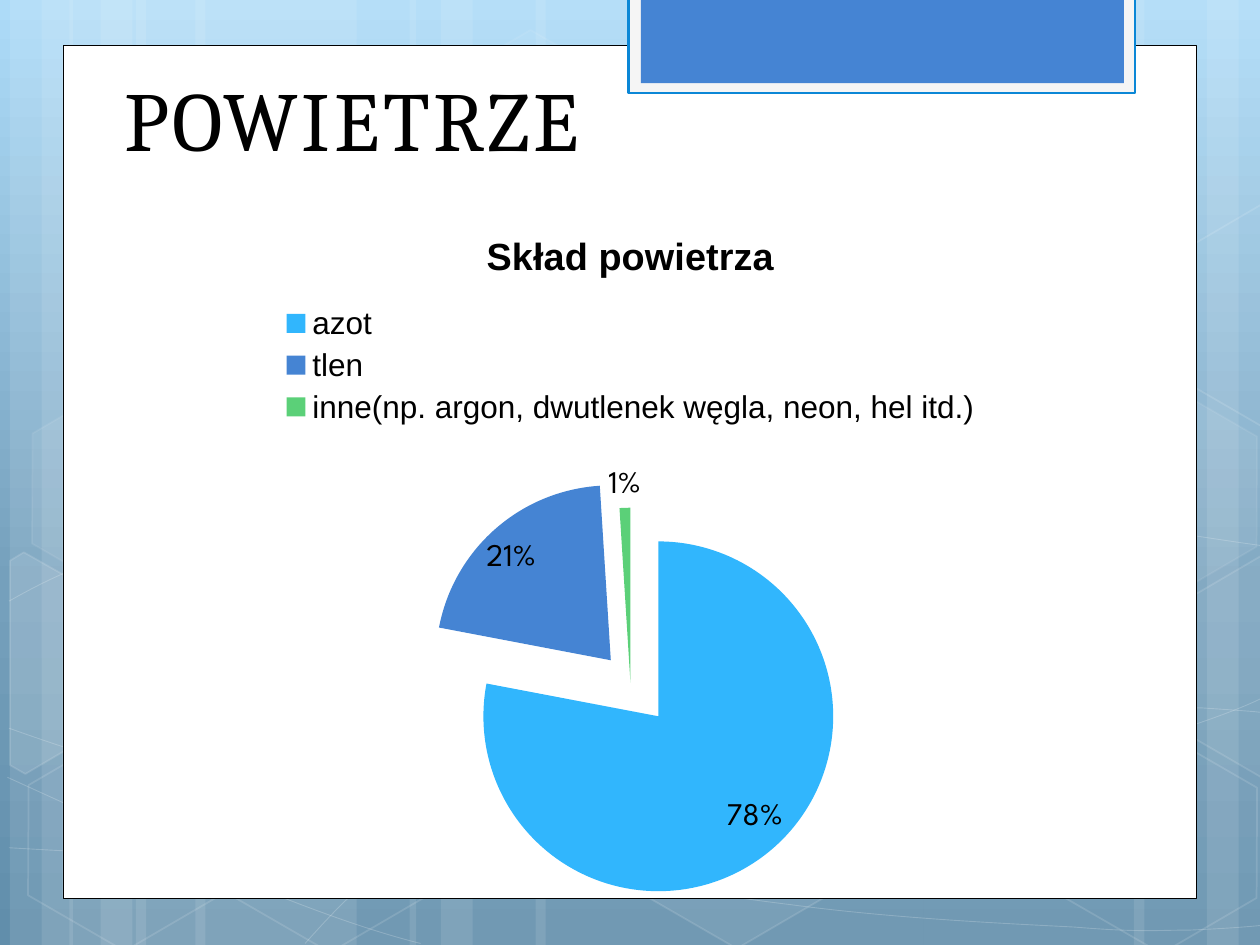
from copy import deepcopy
from dataclasses import dataclass
from math import cos, radians, sin
from typing import Optional

from lxml import etree
from pptx import Presentation
from pptx.chart.data import CategoryChartData
from pptx.dml.color import RGBColor
from pptx.enum.chart import XL_CHART_TYPE, XL_LABEL_POSITION, XL_LEGEND_POSITION
from pptx.enum.shapes import MSO_SHAPE
from pptx.enum.text import MSO_ANCHOR, PP_ALIGN
from pptx.oxml.ns import qn
from pptx.util import Cm, Pt

RECTANGLE = MSO_SHAPE.RECTANGLE
HEXAGON = MSO_SHAPE.HEXAGON
PIE = XL_CHART_TYPE.PIE
BEST_FIT = XL_LABEL_POSITION.BEST_FIT
LEGEND_TOP = XL_LEGEND_POSITION.TOP
BOTTOM = MSO_ANCHOR.BOTTOM
CENTER = PP_ALIGN.CENTER

WHITE = RGBColor(0xFF, 0xFF, 0xFF)
BLACK = RGBColor(0, 0, 0)
PALE = RGBColor(0xF5, 0xF5, 0xF5)
BORDER = RGBColor(0x0B, 0x87, 0xD6)
BLUE = RGBColor(0x45, 0x84, 0xD3)
SKY = RGBColor(0x31, 0xB6, 0xFD)
GREEN = RGBColor(0x5B, 0xD0, 0x78)
BACKGROUND = [
    (0, RGBColor(0xAD, 0xDB, 0xF8)),
    (0.62, RGBColor(0x75, 0xA0, 0xBC)),
    (1, RGBColor(0x61, 0x8E, 0xAB)),
]
WIDTH, HEIGHT = 25.4, 19.05
TILT = 30


@dataclass
class Style:
    fill: Optional[RGBColor] = None
    line: Optional[RGBColor] = None
    weight: float = 1
    fill_alpha: int = 100
    line_alpha: int = 100


@dataclass
class Panel:
    left: float
    top: float
    width: float
    height: float
    style: Style


@dataclass
class Hexagon:
    left: float
    top: float
    fill_alpha: int
    line_alpha: int


@dataclass
class CutHexagon:
    center: tuple
    corners: list
    fill_alpha: int


@dataclass
class Slice:
    name: str
    value: int
    color: RGBColor
    explosion: int


STRIPE = Style(WHITE, fill_alpha=10)
STRIPES = [
    (2.74, 4.45), (0.2, 1.27), (0.84, 2.11),
    (3.94, 4.45), (1.4, 1.27), (2.03, 2.11),
    (18.62, 4.45), (24.33, 1.27), (22.86, 2.11),
    (10.8, 7.82), (8.26, 1.27), (8.89, 2.11),
]
CURVE = Style(line=WHITE, weight=0.5, line_alpha=20)
CURVES = [
    [(0.18, 17.09), (1.55, 17.17), (2.92, 17.25), (4.83, 17.22), (6.73, 17.2),
     (9.09, 17.15), (11.63, 16.89), (14.17, 16.64), (17.78, 16.15),
     (20.12, 15.67), (22.43, 15.19), (24.82, 14.43), (25.58, 14)],
    [(0.18, 12.12), (0.91, 11.71), (1.65, 11.33), (3.07, 10.95), (4.52, 10.57),
     (6.58, 10.01), (8.81, 9.83), (11.07, 9.65), (13.82, 9.63),
     (16.61, 9.83), (19.41, 10.03), (24.05, 10.82), (25.58, 11.02)],
    [(0.15, 15.67), (3.22, 17.07), (6.27, 18.47), (8.48, 19.02)],
    [(0.18, 14.68), (0.97, 14.96), (1.78, 15.24), (3.25, 15.65), (4.72, 16.03),
     (6.93, 16.66), (9.07, 17.09), (11.18, 17.53), (13.84, 17.98),
     (15.95, 18.24), (18.06, 18.52), (20.32, 18.62), (21.67, 18.69),
     (22.99, 18.8), (23.34, 18.75), (24, 18.75), (24.66, 18.72),
     (25.12, 18.69), (25.58, 18.64)],
    [(6.15, 19.02), (6.6, 18.52), (7.06, 18.01), (7.67, 17.55), (8.28, 17.09),
     (9.14, 16.59), (9.86, 16.23), (10.57, 15.88), (11, 15.72),
     (11.94, 15.47), (12.85, 15.21), (14.55, 14.86), (15.44, 14.68),
     (16.36, 14.5), (16.48, 14.5), (17.27, 14.45), (18.06, 14.38),
     (19.3, 14.3), (20.17, 14.27), (21.06, 14.25), (22.5, 14.27),
     (22.5, 14.27), (23.07, 14.27), (23.64, 14.27), (24.21, 14.27),
     (24.66, 14.3), (25.1, 14.33), (25.32, 14.35),
     (25.55, 14.38), (25.48, 14.35), (25.55, 14.38)],
]
HEXAGONS = [
    Hexagon(8.48, 0.91, 4, 8),
    Hexagon(12.62, 14.96, 6, 12),
    Hexagon(0.28, 15.01, 0, 12),
    Hexagon(0.36, 7.92, 7, 8),
    Hexagon(4.42, 15.04, 0, 12),
    Hexagon(19.13, 11.51, 10, 12),
    Hexagon(21.18, 15.06, 0, 12),
    Hexagon(21.18, 7.98, 7, 8),
]
RIGHT_EDGE = [(23.52, 12.32), (25.43, 11.2), (25.63, 11.33),
              (25.63, 15.57), (25.45, 15.67), (23.52, 14.55)]
RISE = 7.08
CUT_HEXAGONS = [
    CutHexagon((0.91, 13.59), [(0.2, 11.3), (0.48, 11.13), (2.44, 12.24),
                               (2.41, 14.48), (0.51, 15.6), (0.2, 15.42)], 10),
    CutHexagon((25.02, 13.21), RIGHT_EDGE, 4),
    CutHexagon((25.02, 13.21 - RISE), [(x, y - RISE) for x, y in RIGHT_EDGE], 0),
]
PANELS = [
    Panel(1.27, 0.91, 22.86, 17.2, Style(WHITE, BLACK, 0.5)),
    Panel(12.67, -0.05, 10.21, 1.93, Style(PALE, BORDER, 1.25)),
    Panel(12.92, -0.05, 9.74, 1.73, Style(BLUE)),
]
SLICES = [
    Slice("azot", 78, SKY, 25),
    Slice("tlen", 21, BLUE, 17),
    Slice("inne(np. argon, dwutlenek węgla, neon, hel itd.)", 1, GREEN, 0),
]


def set_alpha(holder, percent: int) -> None:
    if percent < 100:
        color = holder.find(qn("a:solidFill"))[0]
        etree.SubElement(color, qn("a:alpha")).set("val", str(percent * 1000))


def apply_style(shape, style: Style) -> None:
    shape.shadow.inherit = False
    if style.fill is None or style.fill_alpha == 0:
        shape.fill.background()
    else:
        shape.fill.solid()
        shape.fill.fore_color.rgb = style.fill
        set_alpha(shape._element.spPr, style.fill_alpha)
    if style.line is None:
        shape.line.fill.background()
    else:
        shape.line.color.rgb = style.line
        shape.line.width = Pt(style.weight)
        set_alpha(shape._element.spPr.find(qn("a:ln")), style.line_alpha)


def draw_panel(page, panel: Panel) -> None:
    shape = page.shapes.add_shape(
        RECTANGLE, Cm(panel.left), Cm(panel.top), Cm(panel.width), Cm(panel.height))
    apply_style(shape, panel.style)


def draw_hexagon(page, item: Hexagon) -> None:
    shape = page.shapes.add_shape(HEXAGON, Cm(item.left), Cm(item.top), Cm(4.45), Cm(3.86))
    shape.adjustments[0] = 0.285
    shape.rotation = TILT
    apply_style(shape, Style(WHITE, WHITE, 1, item.fill_alpha, item.line_alpha))


def add_outline(page, points: list, close: bool):
    places = [(Cm(x), Cm(y)) for x, y in points]
    builder = page.shapes.build_freeform(*places[0])
    builder.add_line_segments(places[1:], close=close)
    return builder.convert_to_shape()


def draw_curve(page, knots: list) -> None:
    shape = add_outline(page, knots, False)
    segments = list(shape._element.iter(qn("a:lnTo")))
    for start in range(0, len(segments), 3):
        bend = etree.Element(qn("a:cubicBezTo"))
        segments[start].addprevious(bend)
        for segment in segments[start:start + 3]:
            bend.append(segment[0])
            segment.getparent().remove(segment)
    apply_style(shape, CURVE)


def draw_cut_hexagon(page, item: CutHexagon) -> None:
    cx, cy = item.center
    c, s = cos(radians(TILT)), sin(radians(TILT))
    upright = [(cx + (x - cx) * c + (y - cy) * s, cy + (y - cy) * c - (x - cx) * s)
               for x, y in item.corners]
    shape = add_outline(page, upright, True)
    shape.rotation = TILT
    apply_style(shape, Style(WHITE, WHITE, 1, item.fill_alpha, 12))


def paint_background(page) -> None:
    fill = page.background.fill
    fill.gradient()
    fill.gradient_angle = 270
    stops = page._element.find(".//" + qn("a:gsLst"))
    stops.append(deepcopy(stops[0]))
    for stop, (position, color) in zip(fill.gradient_stops, BACKGROUND):
        stop.position = position
        stop.color.rgb = color


def set_font(font, name: str, size: float, bold: bool = False) -> None:
    font.name = name
    font.size = Pt(size)
    font.bold = bold
    font.color.rgb = BLACK


def add_title(page) -> None:
    box = page.shapes.add_textbox(Cm(1.29), Cm(1.5), Cm(11.61), Cm(2.01))
    box.text_frame.word_wrap = True
    box.text_frame.vertical_anchor = BOTTOM
    para = box.text_frame.paragraphs[0]
    para.alignment = CENTER
    span = para.add_run()
    span.text = "POWIETRZE"
    set_font(para.font, "Cambria", 48)
    span._r.get_or_add_rPr().set("spc", "200")


def explode(neighbour, percent: int) -> None:
    explosion = etree.Element(qn("c:explosion"))
    explosion.set("val", str(percent))
    neighbour.addprevious(explosion)


def add_pie(page) -> None:
    data = CategoryChartData()
    data.categories = [item.name for item in SLICES]
    data.add_series("Skład powietrza", [item.value for item in SLICES])
    chart = page.shapes.add_chart(PIE, Cm(0.71), Cm(4.12), Cm(24), Cm(14.4), data).chart
    set_font(chart.font, "League Spartan", 18)
    chart.has_title = True
    heading = chart.chart_title.text_frame
    heading.text = "Skład powietrza"
    set_font(heading.paragraphs[0].font, "Arial", 21.6, True)
    chart.has_legend = True
    chart.legend.position = LEGEND_TOP
    chart.legend.include_in_layout = False
    set_font(chart.legend.font, "Arial", 18)
    plot = chart.plots[0]
    plot.vary_by_categories = True
    series = plot.series[0]
    for index, item in enumerate(SLICES):
        fill = series.points[index].format.fill
        fill.solid()
        fill.fore_color.rgb = item.color
    points = series._element.findall(qn("c:dPt"))
    explode(points[0], 25)
    for point, item in zip(points, SLICES):
        explode(point.find(qn("c:spPr")), item.explosion)
    plot.has_data_labels = True
    labels = plot.data_labels
    labels.show_percentage = True
    labels.show_value = False
    labels.number_format = "0%"
    labels.number_format_is_linked = False
    labels.position = BEST_FIT
    set_font(labels.font, "League Spartan", 18)


def main() -> None:
    deck = Presentation()
    deck.slide_width, deck.slide_height = Cm(WIDTH), Cm(HEIGHT)
    page = deck.slides.add_slide(deck.slide_layouts[6])
    paint_background(page)
    for left, width in STRIPES:
        draw_panel(page, Panel(left, 0, width, HEIGHT, STRIPE))
    for knots in CURVES:
        draw_curve(page, knots)
    for item in HEXAGONS:
        draw_hexagon(page, item)
    for item in CUT_HEXAGONS:
        draw_cut_hexagon(page, item)
    for panel in PANELS:
        draw_panel(page, panel)
    add_title(page)
    add_pie(page)
    deck.save("out.pptx")


if __name__ == "__main__":
    main()
